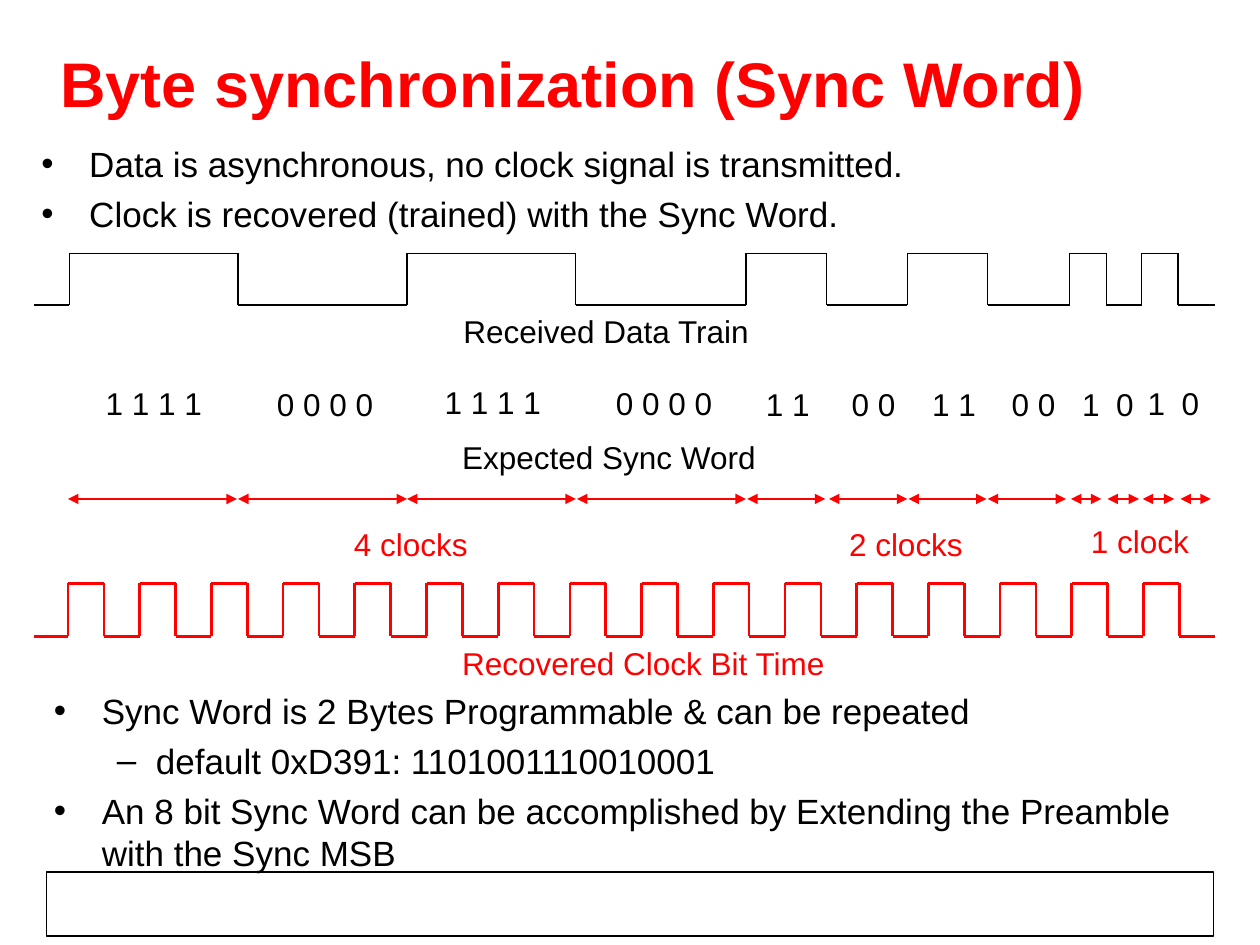
from lxml.etree import SubElement
from pptx import Presentation
from pptx.dml.color import RGBColor
from pptx.enum.shapes import MSO_CONNECTOR, MSO_SHAPE
from pptx.enum.text import MSO_ANCHOR, PP_ALIGN
from pptx.oxml.ns import qn
from pptx.util import Inches, Pt

BLACK = RGBColor(0x00, 0x00, 0x00)
RED = RGBColor(0xFF, 0x00, 0x00)
FONT = "Arial"

TITLE = "Byte synchronization (Sync Word)"
BULLET_BOXES = [
    ((0.23, 1.08, 9.08, 1.03), [
        (0, "Data is asynchronous, no clock signal is transmitted."),
        (0, "Clock is recovered (trained) with the Sync Word."),
    ]),
    ((0.33, 5.42, 9.43, 1.47), [
        (0, "Sync Word is 2 Bytes Programmable & can be repeated"),
        (1, "default 0xD391: 1101001110010001"),
        (0, "An 8 bit Sync Word can be accomplished by Extending the Preamble "
            "with the Sync MSB"),
    ]),
]
BULLET_LEVELS = [("•", 0.38, 0.38), ("–", 0.81, 0.31)]

LABELS = [
    ("Received Data Train", 3.58, 2.43, 2.48, BLACK),
    ("Expected Sync Word", 3.57, 3.43, 2.53, BLACK),
    ("4 clocks", 2.71, 4.12, 1.1, RED),
    ("2 clocks", 6.64, 4.12, 1.1, RED),
    ("1 clock", 8.56, 4.09, 0.98, RED),
    ("Recovered Clock Bit Time", 3.57, 5.06, 3.09, RED),
]
BITS = [
    ("1 1 1 1", 0.74, 3.0), ("0 0 0 0", 2.1, 3.01),
    ("1 1 1 1", 3.43, 2.99), ("0 0 0 0", 4.79, 3.0),
    ("1 1", 5.98, 3.01), ("0 0", 6.66, 3.01),
    ("1 1", 7.3, 3.01), ("0 0", 7.93, 3.01),
    ("1", 8.49, 3.01), ("0", 8.76, 3.01), ("1", 9.01, 3.0), ("0", 9.28, 3.0),
]
BIT_WIDTHS = {7: 0.97, 3: 0.55, 1: 0.34}

WAVE_START, WAVE_END = 0.27, 9.64
DATA_EDGES = [0.55, 1.89, 3.23, 4.57, 5.92, 6.56, 7.2, 7.84, 8.49, 8.78, 9.06, 9.35]
CLOCK_FIRST, CLOCK_LAST, CLOCK_EDGE_COUNT = 0.54, 9.36, 32
CLOCK_SPANS = [
    (0.54, 1.88), (1.89, 3.23), (3.23, 4.57), (4.58, 5.92),
    (5.93, 6.55), (6.58, 7.2), (7.21, 7.83), (7.84, 8.46),
    (8.5, 8.74), (8.79, 9.04), (9.07, 9.32), (9.37, 9.61),
]
SPAN_TOP = 3.96


def format_font(paragraph, size, color, bold=False):
    for run in paragraph.runs:
        run.font.name = FONT
        run.font.size = Pt(size)
        run.font.bold = bold
        run.font.color.rgb = color


def add_line(slide, start, end, color, width, arrows=False):
    line = slide.shapes.add_connector(
        MSO_CONNECTOR.STRAIGHT, *(Inches(value) for value in (*start, *end)))
    line.line.color.rgb = color
    line.line.width = Pt(width)
    if arrows:
        outline = line.line._get_or_add_ln()
        for tag in ("a:headEnd", "a:tailEnd"):
            SubElement(outline, qn(tag), type="triangle")
    SubElement(line._element.spPr, qn("a:effectLst"))


def add_wave(slide, edges, high, low, color, width):
    stops = [WAVE_START, *edges, WAVE_END]
    for index, (left, right) in enumerate(zip(stops, stops[1:])):
        level = high if index % 2 else low
        add_line(slide, (left, level), (right, level), color, width)
    for edge in edges:
        add_line(slide, (edge, high), (edge, low), color, width)


def add_label(slide, text, left, top, width, color):
    box = slide.shapes.add_textbox(
        Inches(left), Inches(top), Inches(width), Inches(0.4))
    box.text_frame.word_wrap = False
    box.text_frame.text = text
    format_font(box.text_frame.paragraphs[0], 18, color)


def add_bullets(slide, bounds, items):
    box = slide.shapes.add_textbox(*(Inches(value) for value in bounds))
    text_frame = box.text_frame
    text_frame.word_wrap = True
    text_frame.text = "\n".join(text for _, text in items)
    for index, (paragraph, (level, _)) in enumerate(zip(text_frame.paragraphs, items)):
        mark, margin, hanging = BULLET_LEVELS[level]
        paragraph.level = level
        paragraph.space_before = Pt(4.6 if index else 0)
        properties = paragraph._p.get_or_add_pPr()
        properties.set("marL", str(Inches(margin)))
        properties.set("indent", str(-Inches(hanging)))
        SubElement(properties, qn("a:buFont"), typeface=FONT)
        SubElement(properties, qn("a:buChar"), char=mark)
        format_font(paragraph, 20, BLACK)


def add_title(slide):
    title = slide.shapes.title
    title.left, title.top = Inches(0.38), Inches(0)
    title.width, title.height = Inches(9.25), Inches(1.3)
    title.text_frame.text = TITLE
    title.text_frame.vertical_anchor = MSO_ANCHOR.MIDDLE
    paragraph = title.text_frame.paragraphs[0]
    paragraph.alignment = PP_ALIGN.LEFT
    format_font(paragraph, 36, RED, bold=True)


def add_footer_frame(slide):
    frame = slide.shapes.add_shape(
        MSO_SHAPE.RECTANGLE, Inches(0.37), Inches(6.92), Inches(9.26), Inches(0.51))
    frame.shadow.inherit = False
    frame.fill.background()
    frame.line.color.rgb = BLACK
    frame.line.width = Pt(0.75)


def main():
    """Build the byte synchronization slide."""
    presentation = Presentation()
    presentation.slide_width, presentation.slide_height = Inches(10), Inches(7.5)
    slide = presentation.slides.add_slide(presentation.slide_layouts[5])

    add_title(slide)
    add_footer_frame(slide)
    for bounds, items in BULLET_BOXES:
        add_bullets(slide, bounds, items)

    clock_step = (CLOCK_LAST - CLOCK_FIRST) / (CLOCK_EDGE_COUNT - 1)
    clock_edges = [CLOCK_FIRST + clock_step * index for index in range(CLOCK_EDGE_COUNT)]
    add_wave(slide, DATA_EDGES, 2.01, 2.42, BLACK, 0.75)
    add_wave(slide, clock_edges, 4.63, 5.05, RED, 1.5)
    for left, right in CLOCK_SPANS:
        add_line(slide, (left, SPAN_TOP), (right, SPAN_TOP), RED, 0.75, arrows=True)

    for label in LABELS:
        add_label(slide, *label)
    for text, left, top in BITS:
        add_label(slide, text, left, top, BIT_WIDTHS[len(text)], BLACK)

    presentation.save("out.pptx")


if __name__ == "__main__":
    main()
